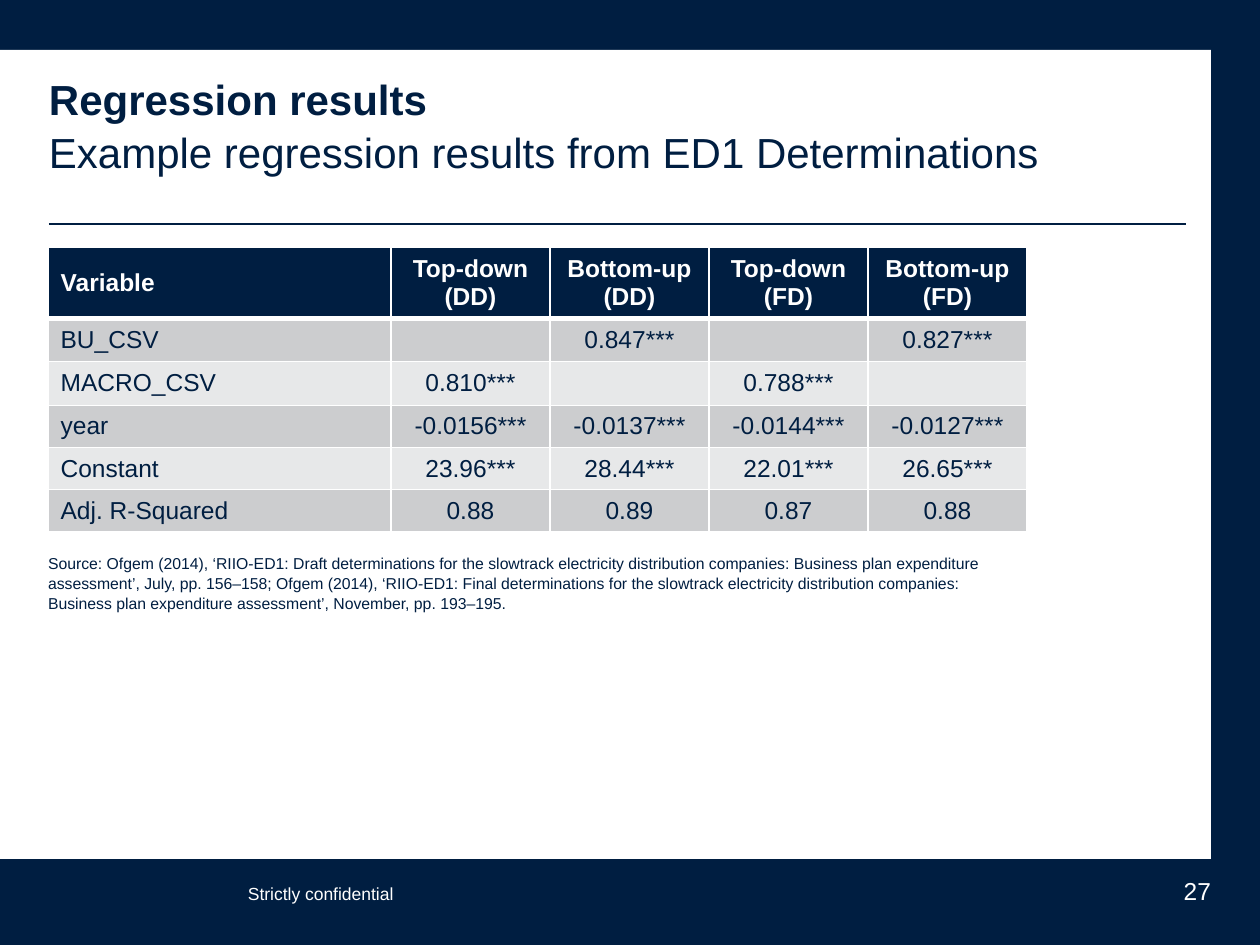
from pptx import Presentation
from pptx.dml.color import RGBColor
from pptx.enum.shapes import MSO_CONNECTOR, MSO_SHAPE
from pptx.enum.text import MSO_ANCHOR, PP_ALIGN
from pptx.oxml.xmlchemy import OxmlElement
from pptx.util import Emu, Pt
from lxml.etree import SubElement
from pptx.oxml.ns import qn

PX = 914400 // 126
COLORS = {"navy": "001E41", "white": "FFFFFF", "dark_band": "CCCDCF", "light_band": "E7E8E9"}


def px(*lengths):
    return [Emu(length * PX) for length in lengths]


def add_text(box, lines, size, color, align=PP_ALIGN.LEFT, spacing=1.0):
    frame = slide.shapes.add_textbox(*px(*box)).text_frame
    frame.word_wrap = True
    frame.margin_left = frame.margin_right = frame.margin_top = frame.margin_bottom = 0
    frame.text = "\n".join(lines)
    for paragraph in frame.paragraphs:
        paragraph.alignment = align
        paragraph.line_spacing = spacing
        font = paragraph.runs[0].font
        font.name = "Arial"
        font.size = Pt(size)
        font.color.rgb = RGBColor.from_string(COLORS[color])
    return frame


prs = Presentation()
prs.slide_width, prs.slide_height = px(1260, 945)
slide = prs.slides.add_slide(prs.slide_layouts[6])

for box, color in [((0, 0, 1260, 945), "navy"), ((0, 50, 1211, 809), "white")]:
    panel = slide.shapes.add_shape(MSO_SHAPE.RECTANGLE, *px(*box))
    panel.shadow.inherit = False
    panel.fill.solid()
    panel.fill.fore_color.rgb = RGBColor.from_string(COLORS[color])
    panel.line.fill.background()

title_rule = slide.shapes.add_connector(MSO_CONNECTOR.STRAIGHT, *px(49, 224, 1186, 224))
title_rule.line.color.rgb = RGBColor.from_string(COLORS["navy"])
title_rule.line.width = Pt(0.75)
SubElement(title_rule._element.spPr, qn("a:effectLst"))

title = add_text(
    (49, 71, 1137, 115),
    ["Regression results", "Example regression results from ED1 Determinations"],
    24, "navy", spacing=1.05,
)
title.paragraphs[0].runs[0].font.bold = True

results = [
    ["Variable", "Top-down (DD)", "Bottom-up (DD)", "Top-down (FD)", "Bottom-up (FD)"],
    ["BU_CSV", "", "0.847***", "", "0.827***"],
    ["MACRO_CSV", "0.810***", "", "0.788***", ""],
    ["year", "-0.0156***", "-0.0137***", "-0.0144***", "-0.0127***"],
    ["Constant", "23.96***", "28.44***", "22.01***", "26.65***"],
    ["Adj. R-Squared", "0.88", "0.89", "0.87", "0.88"],
]
column_widths = [343] + [159] * 4
row_heights = [69, 43, 44, 41, 40, 40]
table = slide.shapes.add_table(
    len(results), len(column_widths), *px(48, 247, sum(column_widths), sum(row_heights))
).table
for column, width in zip(table.columns, px(*column_widths)):
    column.width = width
for row, height in zip(table.rows, px(*row_heights)):
    row.height = height

for r, values in enumerate(results):
    band = "navy" if r == 0 else "dark_band" if r % 2 else "light_band"
    for c, value in enumerate(values):
        cell = table.cell(r, c)
        cell.vertical_anchor = MSO_ANCHOR.MIDDLE
        cell.text_frame.text = value
        paragraph = cell.text_frame.paragraphs[0]
        paragraph.alignment = PP_ALIGN.CENTER if c else PP_ALIGN.LEFT
        for run in paragraph.runs:
            run.font.name = "Arial"
            run.font.size = Pt(14)
            run.font.bold = r == 0
            run.font.color.rgb = RGBColor.from_string(COLORS["navy" if r else "white"])
        if not value:
            end_format = OxmlElement("a:endParaRPr")
            end_format.set("sz", "1400")
            paragraph._p.append(end_format)
        cell_format = cell._tc.get_or_add_tcPr()
        for side in ("L", "R", "T", "B"):
            heavy = (r, side) in ((0, "B"), (1, "T"))
            border = SubElement(cell_format, qn(f"a:ln{side}"), w=str(Pt(3 if heavy else 1)))
            border_fill = SubElement(border, qn("a:solidFill"))
            SubElement(border_fill, qn("a:srgbClr"), val=COLORS["white"])
        cell.fill.solid()
        cell.fill.fore_color.rgb = RGBColor.from_string(COLORS[band])

add_text((248, 883, 184, 21), ["Strictly confidential"], 10, "white")
add_text((1101, 876, 110, 29), ["27"], 14, "white", PP_ALIGN.RIGHT)
add_text(
    (48, 553, 979, 57),
    ["Source: Ofgem (2014), ‘RIIO-ED1: Draft determinations for the slowtrack electricity "
     "distribution companies: Business plan expenditure assessment’, July, pp. 156–158; "
     "Ofgem (2014), ‘RIIO-ED1: Final determinations for the slowtrack electricity "
     "distribution companies: Business plan expenditure assessment’, November, pp. 193–195."],
    9, "navy", spacing=1.05,
)

prs.save("out.pptx")
